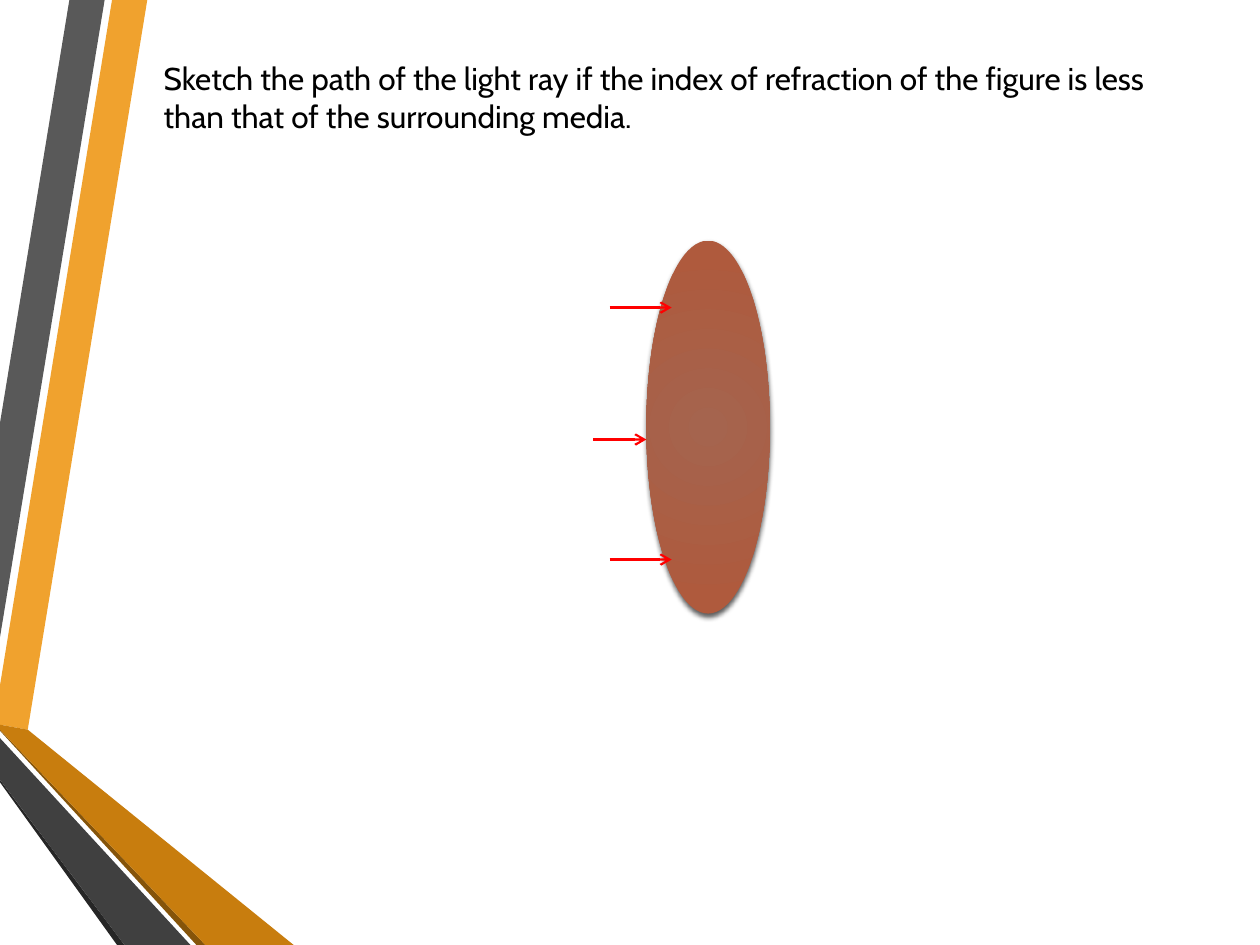
from dataclasses import dataclass

from lxml import etree
from pptx import Presentation
from pptx.dml.color import RGBColor
from pptx.enum.shapes import MSO_CONNECTOR, MSO_SHAPE
from pptx.enum.text import MSO_ANCHOR, MSO_AUTO_SIZE, PP_ALIGN
from pptx.oxml import parse_xml
from pptx.oxml.ns import nsdecls, qn
from pptx.slide import Slide
from pptx.util import Cm, Pt

STRAIGHT = MSO_CONNECTOR.STRAIGHT
ELLIPSE = MSO_SHAPE.OVAL
TOP = MSO_ANCHOR.TOP
LEFT = PP_ALIGN.LEFT
GROW = MSO_AUTO_SIZE.SHAPE_TO_FIT_TEXT
BLANK_LAYOUT = 6
WIDTH, HEIGHT = 25.4, 19.05
RAY_COLOR = "FF0000"
QUESTION = (
    "Sketch the path of the light ray if the index of refraction of the figure "
    "is less than that of the surrounding media."
)


@dataclass(frozen=True)
class Ribbon:
    color: str
    corners: tuple[tuple[float, float], ...]


@dataclass(frozen=True)
class Ray:
    start: float
    end: float
    height: float


RIBBONS = (
    Ribbon("F0A22E", ((0, 13.82), (0, 14.61), (0.56, 14.71), (2.97, 0), (2.26, 0))),
    Ribbon("595959", ((2.11, 0), (1.4, 0), (0, 8.53), (0, 12.85))),
    Ribbon("262626", ((0, 15.72), (0, 15.77), (2.36, HEIGHT), (2.51, HEIGHT))),
    Ribbon("85540A", ((0, 14.71), (0, 14.73), (3.96, HEIGHT), (4.14, HEIGHT))),
    Ribbon("C87D0E", ((0, 14.71), (4.14, HEIGHT), (5.92, HEIGHT), (0.56, 14.71), (0, 14.61))),
    Ribbon("404040", ((0, 15.72), (2.51, HEIGHT), (3.84, HEIGHT), (0, 14.88))),
)
RAYS = (Ray(12.29, 13.54, 6.2), Ray(12.29, 13.54, 11.28), Ray(11.96, 13.03, 8.86))
LENS_STOPS = ((0, "A5644E"), (80, "AD5B3F"), (100, "AF5A3D"))


def rgb(color: str) -> RGBColor:
    return RGBColor.from_string(color)


def draw_ribbon(slide: Slide, ribbon: Ribbon) -> None:
    first, *others = [(Cm(x), Cm(y)) for x, y in ribbon.corners]
    outline = slide.shapes.build_freeform(*first)
    outline.add_line_segments(others, close=True)
    band = outline.convert_to_shape()
    band.fill.solid()
    band.fill.fore_color.rgb = rgb(ribbon.color)
    band.line.fill.background()
    band.shadow.inherit = False


def write_question(slide: Slide) -> None:
    question = slide.shapes.add_textbox(Cm(3.05), Cm(1.07), Cm(21.39), Cm(2.57))
    frame = question.text_frame
    frame_format = {"word_wrap": True, "auto_size": GROW, "vertical_anchor": TOP}
    for attribute, value in frame_format.items():
        setattr(frame, attribute, value)
    paragraph = frame.paragraphs[0]
    paragraph.alignment = LEFT
    wording = paragraph.add_run()
    wording.text = QUESTION
    for attribute, value in {"name": "Cabin", "size": Pt(18)}.items():
        setattr(wording.font, attribute, value)
    wording.font.color.rgb = rgb("000000")


def draw_lens(slide: Slide) -> None:
    lens = slide.shapes.add_shape(ELLIPSE, Cm(13.03), Cm(4.85), Cm(2.49), Cm(7.52))
    lens.fill.background()
    lens.line.fill.background()
    lens.shadow.inherit = False
    properties = lens.element.spPr
    stops = "".join(
        f'<a:gs pos="{position * 1000}"><a:srgbClr val="{color}"/></a:gs>'
        for position, color in LENS_STOPS
    )
    gradient = parse_xml(
        f'<a:gradFill {nsdecls("a")} rotWithShape="1"><a:gsLst>{stops}</a:gsLst>'
        '<a:path path="circle"><a:fillToRect l="50000" t="50000" r="50000" b="50000"/>'
        "</a:path></a:gradFill>"
    )
    properties.replace(properties.find(qn("a:noFill")), gradient)
    shadow = parse_xml(
        f'<a:outerShdw {nsdecls("a")} blurRad="{Pt(3)}" dist="{Pt(2)}" dir="5400000" '
        'rotWithShape="0"><a:srgbClr val="000000"><a:alpha val="64000"/></a:srgbClr>'
        "</a:outerShdw>"
    )
    properties.find(qn("a:effectLst")).append(shadow)


def draw_ray(slide: Slide, ray: Ray) -> None:
    arrow = slide.shapes.add_connector(
        STRAIGHT, Cm(ray.start), Cm(ray.height), Cm(ray.end), Cm(ray.height)
    )
    arrow.line.color.rgb = rgb(RAY_COLOR)
    arrow.line.width = Pt(1.25)
    properties = arrow.element.spPr
    etree.SubElement(properties.find(qn("a:ln")), qn("a:tailEnd"), type="arrow")
    etree.SubElement(properties, qn("a:effectLst"))


def main() -> None:
    deck = Presentation()
    deck.slide_width, deck.slide_height = Cm(WIDTH), Cm(HEIGHT)
    slide = deck.slides.add_slide(deck.slide_layouts[BLANK_LAYOUT])
    for ribbon in RIBBONS:
        draw_ribbon(slide, ribbon)
    write_question(slide)
    draw_lens(slide)
    for ray in RAYS:
        draw_ray(slide, ray)
    deck.save("out.pptx")


if __name__ == "__main__":
    main()
